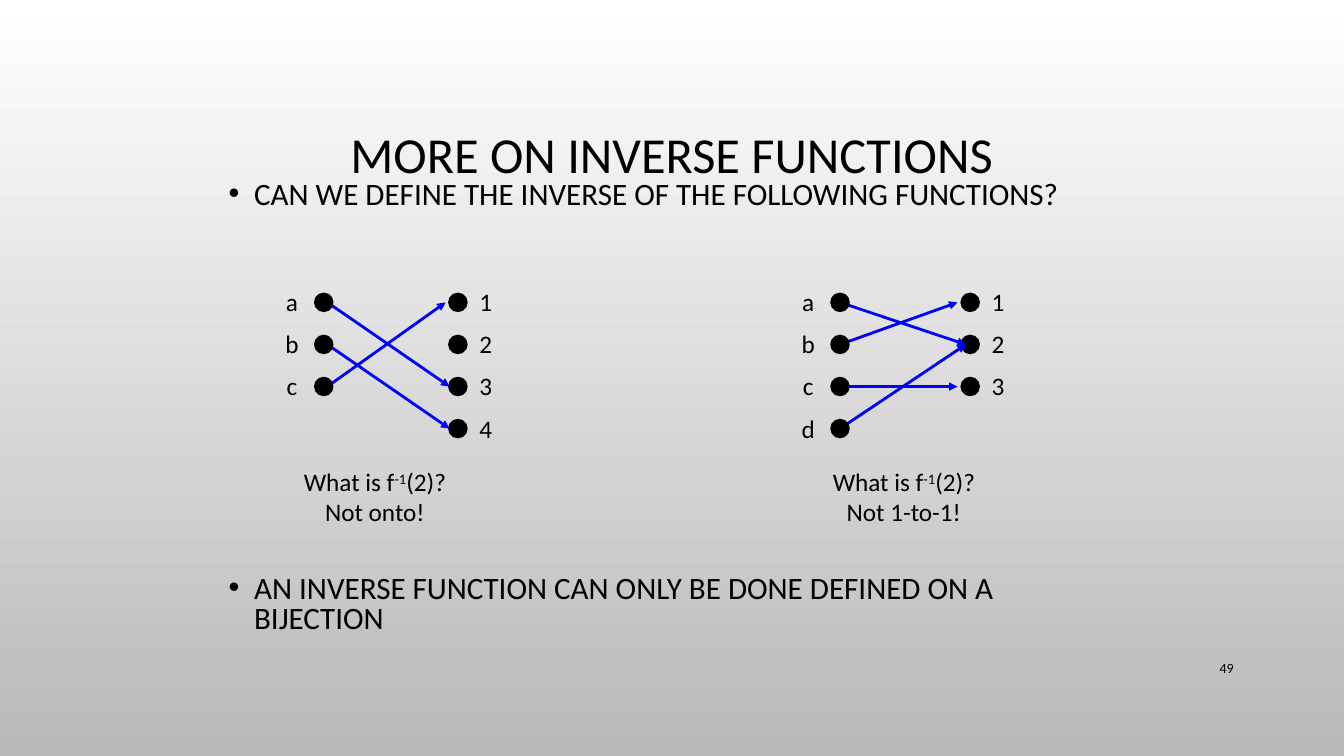
"""Build the slide about functions that have no inverse."""
from lxml.etree import SubElement
from pptx import Presentation
from pptx.dml.color import RGBColor
from pptx.enum.shapes import MSO_CONNECTOR, MSO_SHAPE
from pptx.enum.text import MSO_ANCHOR, MSO_AUTO_SIZE, PP_ALIGN
from pptx.oxml.ns import qn
from pptx.util import Cm, Pt

COLORS = {"ink": "000000", "arrow": "0000FF", "top": "FFFFFF", "bottom": "B9B9B9"}
FONT = "Calibri"
ROW_TOP, ROW_STEP, DOT = 7.62, 1.06, 0.42


def color(name):
    return RGBColor.from_string(COLORS[name])


def style(p, size, align, spacing=1.0, before=0):
    p.alignment = align
    p.line_spacing = spacing
    p.space_before = Pt(before)
    p.space_after = Pt(0)
    for r in p.runs:
        r.font.name = FONT
        r.font.size = Pt(size)
        r.font.color.rgb = color("ink")


def place(sp, left, top, width, height):
    sp.left, sp.top, sp.width, sp.height = Cm(left), Cm(top), Cm(width), Cm(height)


def paint_background(s):
    fill = s.background.fill
    fill.gradient()
    fill.gradient_angle = 270
    for stop, name, position in zip(fill.gradient_stops, ("top", "bottom"), (0, 1)):
        stop.color.rgb = color(name)
        stop.position = position


def fill_title(sp, text):
    place(sp, 2.54, 1.73, 28.78, 4.45)
    tf = sp.text_frame
    tf.text = text
    tf.vertical_anchor = MSO_ANCHOR.MIDDLE
    tf.auto_size = MSO_AUTO_SIZE.NONE
    style(tf.paragraphs[0], 36, PP_ALIGN.CENTER, 0.9)


def fill_bullets(sp, items):
    place(sp, 5.51, 4.45, 22.86, 12.19)
    tf = sp.text_frame
    tf.text = "\n".join(text for text, _ in items)
    tf.vertical_anchor = MSO_ANCHOR.TOP
    tf.auto_size = MSO_AUTO_SIZE.NONE
    for p, (_, before) in zip(tf.paragraphs, items):
        pPr = p._p.get_or_add_pPr()
        pPr.set("marL", str(Cm(0.64)))
        pPr.set("indent", str(Cm(-0.64)))
        SubElement(pPr, qn("a:buFont")).set("typeface", "Arial")
        SubElement(pPr, qn("a:buChar")).set("char", "•")
        style(p, 22.2, PP_ALIGN.LEFT, 0.8, before)


def add_text(shapes, box, text, size, align=PP_ALIGN.CENTER, spacing=1.0, wrap=False):
    sp = shapes.add_textbox(*map(Cm, box))
    tf = sp.text_frame
    tf.text = text
    tf.word_wrap = wrap
    for p in tf.paragraphs:
        style(p, size, align, spacing)
    return tf


def row_y(row):
    return ROW_TOP + row * ROW_STEP


def add_dots(shapes, x, count):
    for row in range(count):
        sp = shapes.add_shape(MSO_SHAPE.OVAL, Cm(x - DOT / 2), Cm(row_y(row) - DOT / 2),
                              Cm(DOT), Cm(DOT))
        sp.shadow.inherit = False
        sp.fill.solid()
        sp.fill.fore_color.rgb = color("ink")
        sp.line.color.rgb = color("ink")
        sp.line.width = Pt(2)


def add_labels(shapes, x, names):
    height = 0.23 + ROW_STEP * len(names)
    add_text(shapes, (x - 0.43, 6.78, 0.86, height), "\n".join(names), 18, spacing=1.4)


def add_arrow(shapes, x1, row1, x2, row2):
    c = shapes.add_connector(MSO_CONNECTOR.STRAIGHT, Cm(x1), Cm(row_y(row1)),
                             Cm(x2), Cm(row_y(row2)))
    c.line.color.rgb = color("arrow")
    c.line.width = Pt(2)
    SubElement(c.line._get_or_add_ln(), qn("a:tailEnd")).set("type", "triangle")
    SubElement(c._element.spPr, qn("a:effectLst"))


def add_mapping(s, domain, codomain, domain_x, codomain_x, start_x, arrows):
    """Draw one function; each arrow is (from row, to row, end x)."""
    shapes = s.shapes.add_group_shape().shapes
    add_dots(shapes, codomain_x, len(codomain))
    add_labels(shapes, codomain_x + 0.7, codomain)
    add_labels(shapes, domain_x - 0.8, domain)
    for row1, row2, end_x in arrows:
        add_arrow(shapes, start_x, row1, end_x, row2)
    add_dots(shapes, domain_x, len(domain))


def add_caption(s, x, verdict):
    tf = add_text(s.shapes, (x - 2.11, 11.63, 4.22, 1.8), f"\n{verdict}", 18)
    p = tf.paragraphs[0]
    for text in ("What is f", "-1", "(2)?"):
        p.add_run().text = text
    style(p, 18, PP_ALIGN.CENTER)
    p.runs[1]._r.get_or_add_rPr().set("baseline", "30000")


def main():
    prs = Presentation()
    prs.slide_width, prs.slide_height = Cm(33.87), Cm(19.05)
    s = prs.slides.add_slide(prs.slide_layouts[1])
    paint_background(s)
    number = add_text(s.shapes, (29.21, 16.33, 2.13, 1.02), "49", 10, PP_ALIGN.RIGHT, wrap=True)
    number.vertical_anchor = MSO_ANCHOR.MIDDLE
    fill_title(s.shapes.title, "MORE ON INVERSE FUNCTIONS")
    fill_bullets(s.placeholders[1], [
        ("CAN WE DEFINE THE INVERSE OF THE FOLLOWING FUNCTIONS?", 0),
        ("AN INVERSE FUNCTION CAN ONLY BE DONE DEFINED ON A BIJECTION", 260),
    ])
    add_mapping(s, "abc", "1234", 8.16, 11.54, 8.25,
                [(1, 3, 11.33), (0, 2, 11.33), (2, 0, 11.23)])
    add_mapping(s, "abcd", "123", 21.17, 24.45, 21.17,
                [(1, 0, 24.13), (0, 1, 24.34), (2, 2, 24.13), (3, 1, 24.34)])
    add_caption(s, 9.45, "Not onto!")
    add_caption(s, 22.78, "Not 1-to-1!")
    prs.save("out.pptx")


if __name__ == "__main__":
    main()
